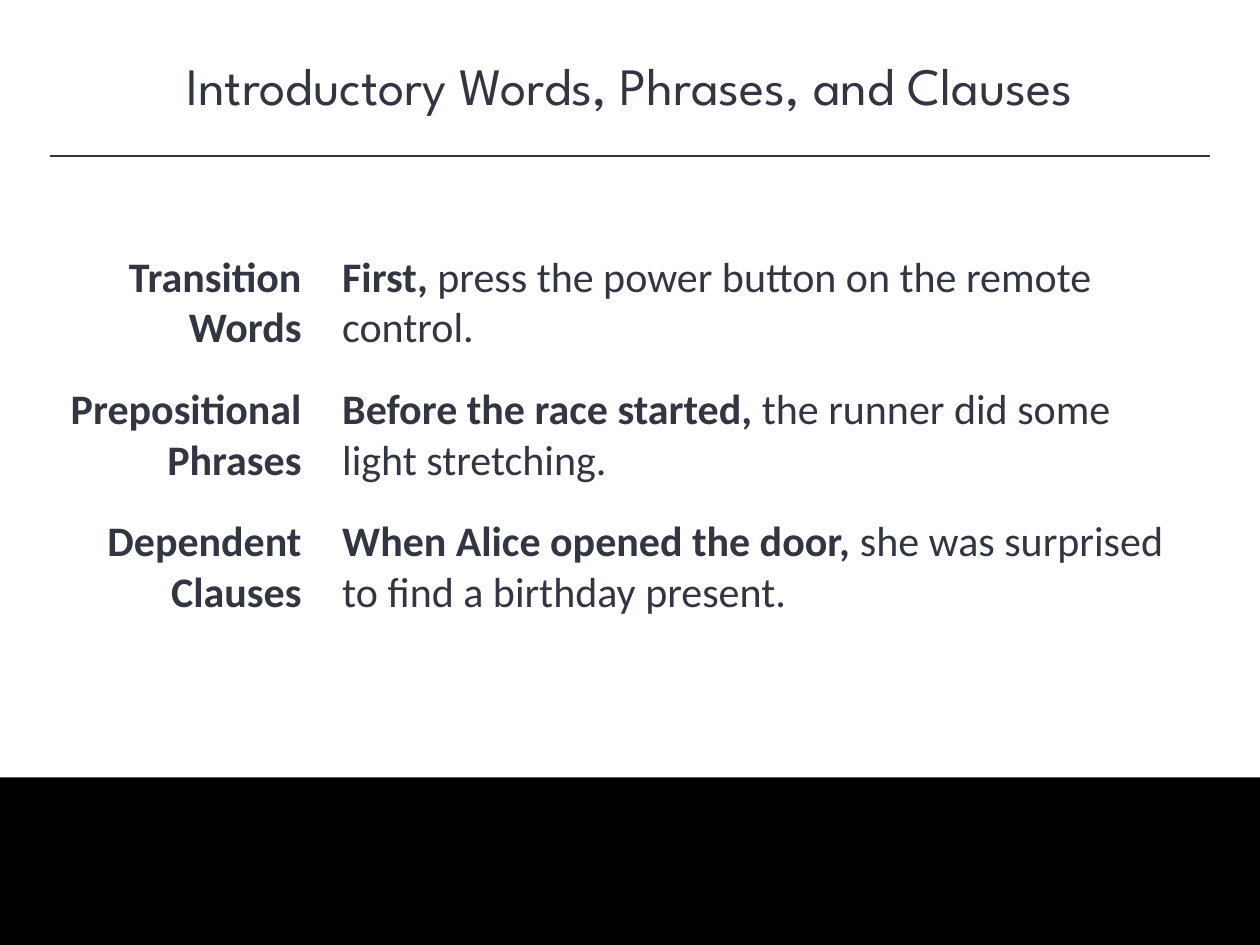
from lxml.etree import SubElement
from pptx import Presentation
from pptx.dml.color import RGBColor
from pptx.enum.shapes import MSO_CONNECTOR, MSO_SHAPE
from pptx.enum.text import MSO_ANCHOR, PP_ALIGN
from pptx.oxml.ns import qn
from pptx.util import Cm, Pt

INK = "323542"


def rgb(value):
    return RGBColor.from_string(value)


def add_text(left, top, width, height, paragraphs, align, font, size, after=0):
    """Add a text box; each paragraph is a list of (text, bold) runs."""
    tf = slide.shapes.add_textbox(Cm(left), Cm(top), Cm(width), Cm(height)).text_frame
    tf.word_wrap = True
    for i, runs in enumerate(paragraphs):
        p = tf.paragraphs[0] if i == 0 else tf.add_paragraph()
        p.alignment = align
        p.space_after = Pt(after)
        for text, bold in runs:
            r = p.add_run()
            r.text = text
            r.font.name = font
            r.font.size = Pt(size)
            r.font.bold = bold
            r.font.color.rgb = rgb(INK)
    return tf


prs = Presentation()
prs.slide_width, prs.slide_height = Cm(25.4), Cm(19.05)
slide = prs.slides.add_slide(prs.slide_layouts[6])
slide.background.fill.solid()
slide.background.fill.fore_color.rgb = rgb("FFFFFF")

# Title
add_text(0, 0.94, 25.4, 1.55, [[("Introductory Words, Phrases, and Clauses", False)]],
         PP_ALIGN.CENTER, "League Spartan", 30)

# Bottom band
sp = slide.shapes.add_shape(MSO_SHAPE.RECTANGLE, Cm(0), Cm(15.67), Cm(25.4), Cm(3.38))
sp.shadow.inherit = False
sp.fill.solid()
sp.fill.fore_color.rgb = rgb("000000")
sp.line.fill.background()

# Rule under the title
rule = slide.shapes.add_connector(MSO_CONNECTOR.STRAIGHT, Cm(1), Cm(3.15), Cm(24.4), Cm(3.15))
rule.line.color.rgb = rgb(INK)
rule.line.width = Pt(1)
SubElement(rule.element.spPr, qn("a:effectLst"))

# Introductory element, opening words, rest of the sentence
examples = [
    ("Transition Words", "First, ", "press the power button on the remote control."),
    ("Prepositional Phrases", "Before the race started, ",
     "the runner did some light stretching."),
    ("Dependent Clauses", "When Alice opened the door, ",
     "she was surprised to find a birthday present."),
]
labels = [[(label, True)] for label, _, _ in examples]
sentences = [[(opening, True), (rest, False)] for _, opening, rest in examples]

# Label and sentence columns
for left, width, paragraphs, align in [
    (1, 5.33, labels, PP_ALIGN.RIGHT),
    (6.65, 17.1, sentences, PP_ALIGN.LEFT),
]:
    tf = add_text(left, 4.88, width, 7.7, paragraphs, align, "Calibri", 24, after=18)
    tf.vertical_anchor = MSO_ANCHOR.MIDDLE

prs.save("out.pptx")
